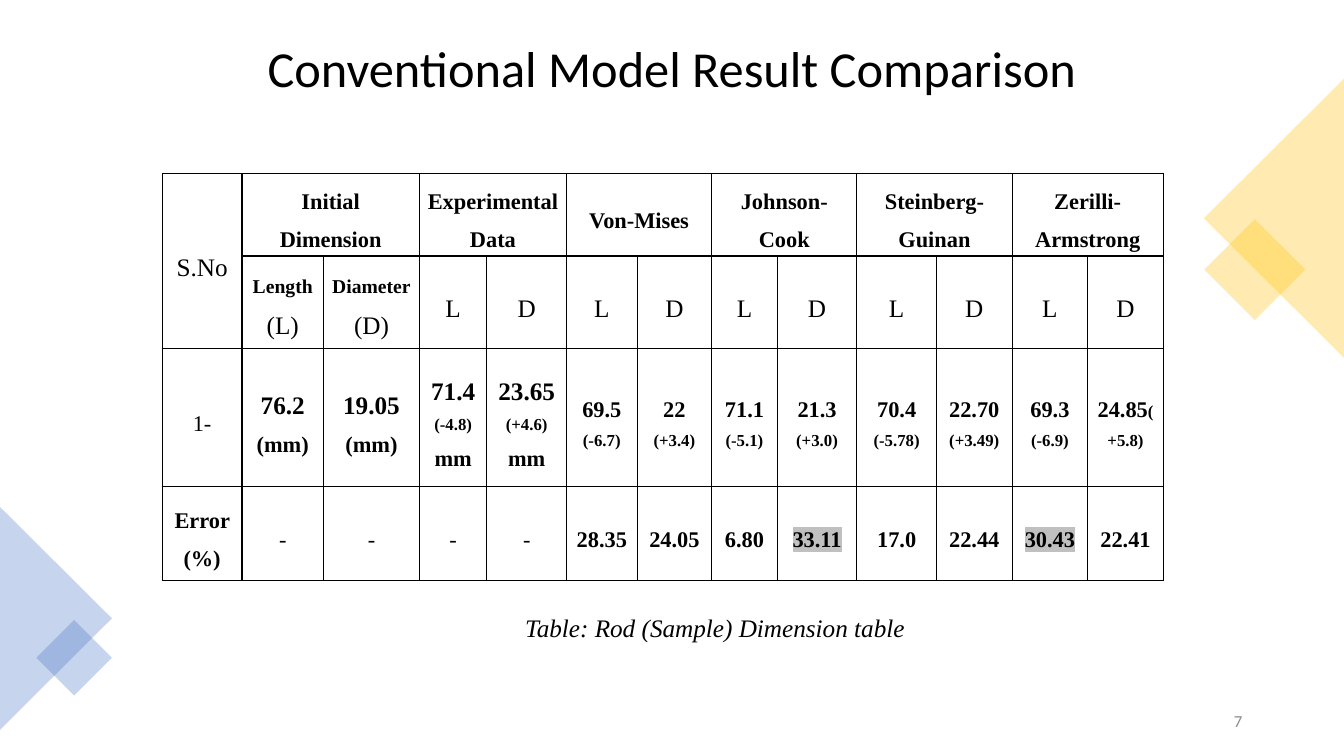
from lxml.etree import SubElement
from pptx import Presentation
from pptx.dml.color import RGBColor
from pptx.enum.shapes import MSO_SHAPE as Shape
from pptx.enum.text import MSO_ANCHOR as Anchor, PP_ALIGN as Align
from pptx.oxml import parse_xml
from pptx.oxml.ns import nsdecls, qn
from pptx.util import Inches, Pt

COLORS = {
    "text": "000000",
    "number": "8C8C8C",
    "border": "000000",
    "gold": "FFC000",
    "blue": "4472C4",
    "mark": "C0C0C0",
}
SANS, SERIF = "Calibri", "Times New Roman"

COLUMNS = [0.79, 0.81, 0.95, 0.67, 0.79, 0.7, 0.74, 0.65, 0.79, 0.79, 0.75, 0.75, 0.75]
ROWS = [0.82, 0.92, 1.37, 0.93]
GROUPS = ["Initial Dimension", "Experimental Data", "Von-Mises",
          "Johnson-Cook", "Steinberg-Guinan", "Zerilli-Armstrong"]
READINGS = [("69.5", "(-6.7)"), ("22", "(+3.4)"), ("71.1", "(-5.1)"), ("21.3", "(+3.0)"),
            ("70.4", "(-5.78)"), ("22.70", "(+3.49)"), ("69.3", "(-6.9)")]
ERRORS = ["28.35", "24.05", "6.80", "33.11", "17.0", "22.44", "30.43", "22.41"]
MARKED = {"33.11", "30.43"}


def add_run(paragraph, text, size=16, font=SERIF, color="text", bold=False,
            italic=False, mark=None):
    run = paragraph.add_run()
    run.text = text
    run.font.size = Pt(size)
    run.font.name = font
    run.font.bold = bold
    run.font.italic = italic
    run.font.color.rgb = RGBColor.from_string(COLORS[color])
    if mark:
        highlight = parse_xml(f'<a:highlight {nsdecls("a")}>'
                              f'<a:srgbClr val="{COLORS[mark]}"/></a:highlight>')
        run.font._element.find(qn("a:solidFill")).addnext(highlight)


def add_label(slide, box, text, align=Align.LEFT, anchor=Anchor.TOP, spacing=None,
              wrap=True, **style):
    frame = slide.shapes.add_textbox(*map(Inches, box)).text_frame
    frame.word_wrap = wrap
    frame.vertical_anchor = anchor
    paragraph = frame.paragraphs[0]
    paragraph.alignment = align
    paragraph.line_spacing = spacing
    add_run(paragraph, text, **style)


def add_corner(slide, triangle_box, turn, square_box, color):
    """Translucent triangle on the slide edge with a small diamond over it."""
    parts = [(Shape.ISOSCELES_TRIANGLE, triangle_box, turn), (Shape.RECTANGLE, square_box, 45)]
    for kind, box, rotation in parts:
        part = slide.shapes.add_shape(kind, *map(Inches, box))
        part.rotation = rotation
        part.shadow.inherit = False
        part.line.fill.background()
        part.fill.solid()
        part.fill.fore_color.rgb = RGBColor.from_string(COLORS[color])
        tint = part.fill._xPr.find(qn("a:solidFill"))[0]
        SubElement(tint, qn("a:alpha"), val="30000")


def format_cell(cell):
    cell.vertical_anchor = Anchor.MIDDLE
    cell.margin_left = cell.margin_right = Inches(0.07)
    cell.margin_top = cell.margin_bottom = 0
    properties = cell._tc.get_or_add_tcPr()
    for side in ("lnL", "lnR", "lnT", "lnB"):
        properties.append(parse_xml(
            f'<a:{side} {nsdecls("a")} w="{Pt(1)}"><a:solidFill>'
            f'<a:srgbClr val="{COLORS["border"]}"/></a:solidFill></a:{side}>'))
    cell.fill.background()


def fill_cell(cell, *lines):
    """Each line is a list of (text, size, bold) runs, with an optional mark."""
    frame = cell.text_frame
    for index, runs in enumerate(lines):
        paragraph = frame.add_paragraph() if index else frame.paragraphs[0]
        paragraph.alignment = Align.CENTER
        paragraph.line_spacing = 1.5
        for text, size, bold, *mark in runs:
            add_run(paragraph, text, size=size, bold=bold, mark=mark[0] if mark else None)


def add_results(slide, left, top):
    table = slide.shapes.add_table(
        len(ROWS), len(COLUMNS), Inches(left), Inches(top),
        Inches(sum(COLUMNS)), Inches(sum(ROWS))).table
    table.first_row = table.horz_banding = False
    for column, width in zip(table.columns, COLUMNS):
        column.width = Inches(width)
    for row, height in zip(table.rows, ROWS):
        row.height = Inches(height)
    for cell in table.iter_cells():
        format_cell(cell)

    # Headings: one group over each pair of columns
    table.cell(0, 0).merge(table.cell(1, 0))
    fill_cell(table.cell(0, 0), [("S.No", 18, False)])
    for index, group in enumerate(GROUPS):
        first = 1 + 2 * index
        table.cell(0, first).merge(table.cell(0, first + 1))
        fill_cell(table.cell(0, first), [(group, 16, True)])

    # Body rows
    dimensions = [
        [[("Length", 14, True)], [("(L)", 18, False)]],
        [[("Diameter", 14, True), ("(D)", 18, False)]],
    ] + [[[(name, 18, False)]] for name in "LD" * 5]
    sample = [
        [[("1-", 16, False)]],
        [[("76.2", 18, True)], [("(mm)", 16, True)]],
        [[("19.05", 18, True), (" (mm)", 16, True)]],
        [[("71.4", 18, True)], [("(-4.8) ", 12, True), ("mm", 16, True)]],
        [[("23.65", 18, True), (" ", 16, True), ("(+4.6) ", 12, True), ("mm", 16, True)]],
    ]
    sample += [[[(value, 16, True)], [(change, 12, True)]] for value, change in READINGS]
    sample.append([[("24.85", 16, True), ("(+5.8)", 12, True)]])
    errors = [[[("Error (%)", 16, True)]]] + [[[("-", 16, False)]]] * 4
    errors += [[[(value, 16, True, "mark" if value in MARKED else None)]] for value in ERRORS]

    for row, start, contents in [(1, 1, dimensions), (2, 0, sample), (3, 0, errors)]:
        for column, lines in enumerate(contents, start):
            fill_cell(table.cell(row, column), *lines)


def main():
    deck = Presentation()
    deck.slide_width, deck.slide_height = Inches(13.33), Inches(7.5)
    slide = deck.slides.add_slide(deck.slide_layouts[6])

    # Title
    add_label(slide, (0.7, 0.09, 11.93, 1.24), "Conventional Model Result Comparison",
              align=Align.CENTER, anchor=Anchor.MIDDLE, spacing=0.9, size=36, font=SANS)

    # Corner ornaments
    add_corner(slide, (11.25, 1.47, 2.77, 1.39), 270, (12.09, 2.32, 0.71, 0.71), "gold")
    add_corner(slide, (-0.55, 5.58, 2.21, 1.11), 90, (0.47, 6.26, 0.53, 0.53), "blue")

    # Results table and caption
    add_results(slide, 1.61, 1.72)
    add_label(slide, (5.11, 6.03, 4.03, 0.4), "Table: Rod (Sample) Dimension table",
              wrap=False, size=18, italic=True)

    # Slide number
    add_label(slide, (9.42, 6.95, 3, 0.4), "7", align=Align.RIGHT, anchor=Anchor.MIDDLE,
              size=12, font=SANS, color="number")

    deck.save("out.pptx")


if __name__ == "__main__":
    main()
